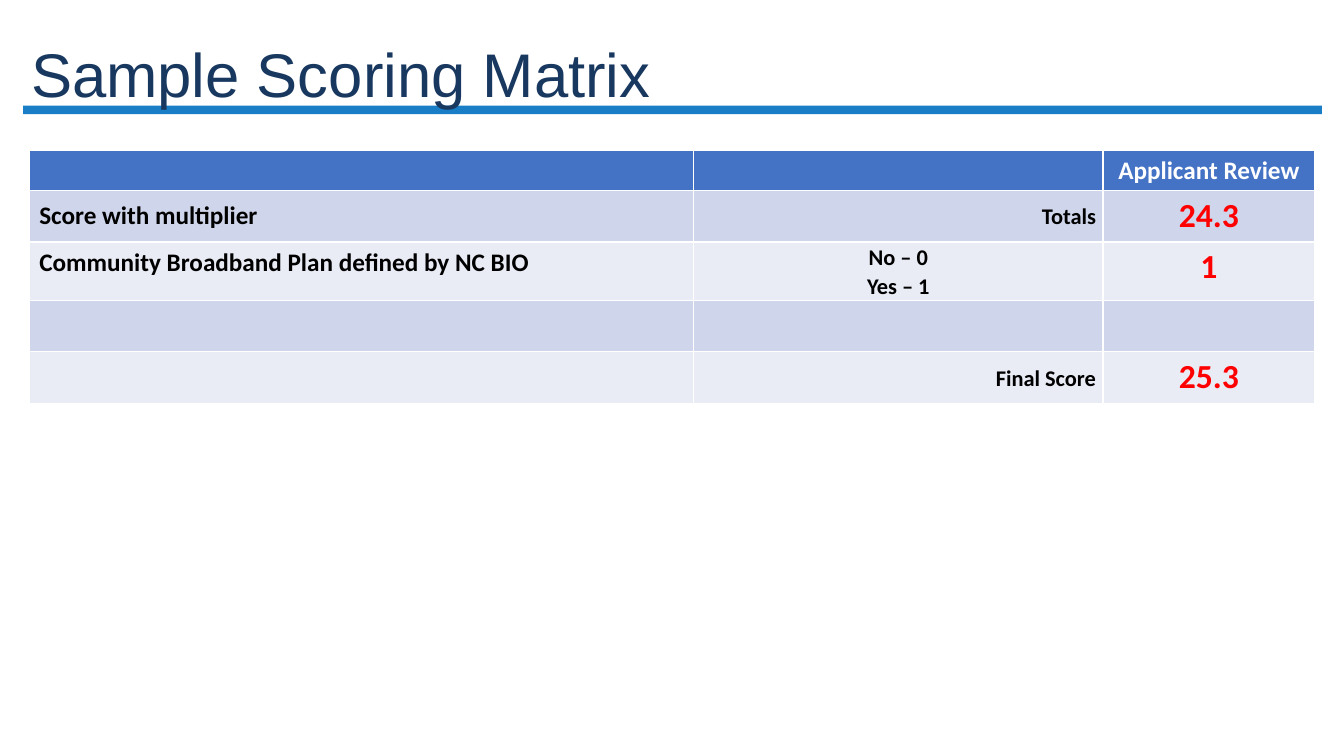
"""Build the Sample Scoring Matrix slide."""
from lxml import etree
from pptx import Presentation
from pptx.dml.color import RGBColor
from pptx.enum.shapes import MSO_CONNECTOR
from pptx.enum.text import MSO_ANCHOR, PP_ALIGN
from pptx.oxml.ns import qn
from pptx.util import Inches, Pt

LEFT, CENTER, RIGHT = PP_ALIGN.LEFT, PP_ALIGN.CENTER, PP_ALIGN.RIGHT
TOP, MIDDLE = MSO_ANCHOR.TOP, MSO_ANCHOR.MIDDLE
STRAIGHT = MSO_CONNECTOR.STRAIGHT

TITLE = "Sample Scoring Matrix"
ROWS = [
    ("", "", "Applicant Review"),
    ("Score with multiplier", "Totals", "24.3"),
    ("Community Broadband Plan defined by NC BIO", "No – 0\nYes – 1", "1"),
    ("", "", ""),
    ("", "Final Score", "25.3"),
]
COL_WIDTHS = (6.59, 4.06, 2.1)
ROW_HEIGHTS = (0.4, 0.51, 0.58, 0.51, 0.51)
TOP_ANCHORED_ROWS = (0, 2)

THEME = {
    "title": ("Arial", 44, "183860"),
    "header": ("Calibri", 18, "FFFFFF"),
    "columns": [("Calibri", 18, "000000"), ("Calibri", 16, "000000"), ("Calibri", 24, "FF0000")],
    "header_fill": "4472C4",
    "bands": ("CFD5EA", "E9EBF5"),
    "rule": "0070C0",
}


def style(p, look, bold=False):
    name, size, color = look
    p.font.name, p.font.size, p.font.bold = name, Pt(size), bold
    p.font.color.rgb = RGBColor.from_string(color)


def add_rule(s):
    rule = s.shapes.add_connector(STRAIGHT, Inches(0.23), Inches(1.09), Inches(13.11), Inches(1.09))
    rule.line.width = Pt(6)
    rule.line.color.rgb = RGBColor.from_string(THEME["rule"])
    props = rule._element.spPr
    color = props.find(".//" + qn("a:srgbClr"))
    etree.SubElement(color, qn("a:alpha")).set("val", "90000")
    etree.SubElement(props, qn("a:effectLst"))


def add_title(s):
    tf = s.shapes.add_textbox(Inches(0.21), Inches(0.4), Inches(12.21), Inches(0.74)).text_frame
    tf.word_wrap = True
    tf.vertical_anchor = MIDDLE
    p = tf.paragraphs[0]
    p.text, p.line_spacing = TITLE, 0.9
    style(p, THEME["title"])


def fill_cell(cell, text, row, col):
    header = row == 0
    middle_col = col == 1
    color = THEME["header_fill"] if header else THEME["bands"][(row - 1) % 2]
    cell.fill.solid()
    cell.fill.fore_color.rgb = RGBColor.from_string(color)
    cell.vertical_anchor = TOP if row in TOP_ANCHORED_ROWS and not middle_col else MIDDLE
    if middle_col:
        cell.margin_left = cell.margin_right = Inches(0.07)
        cell.margin_top = cell.margin_bottom = 0
    cell.text = text
    several = len(cell.text_frame.paragraphs) > 1
    for p in cell.text_frame.paragraphs:
        p.alignment = (LEFT, CENTER if several else RIGHT, CENTER)[col]
        if middle_col:
            p.line_spacing = 1.07
        style(p, THEME["header"] if header else THEME["columns"][col], bold=True)


def add_matrix(s):
    table = s.shapes.add_table(
        len(ROWS), len(COL_WIDTHS), Inches(0.29), Inches(1.49),
        Inches(sum(COL_WIDTHS)), Inches(sum(ROW_HEIGHTS))).table
    for column, width in zip(table.columns, COL_WIDTHS):
        column.width = Inches(width)
    for row, (texts, height) in enumerate(zip(ROWS, ROW_HEIGHTS)):
        table.rows[row].height = Inches(height)
        for col, text in enumerate(texts):
            fill_cell(table.cell(row, col), text, row, col)


def main():
    prs = Presentation()
    prs.slide_width, prs.slide_height = Inches(13.33), Inches(7.5)
    s = prs.slides.add_slide(prs.slide_layouts[6])
    add_rule(s)
    add_title(s)
    add_matrix(s)
    prs.save("out.pptx")


if __name__ == "__main__":
    main()
